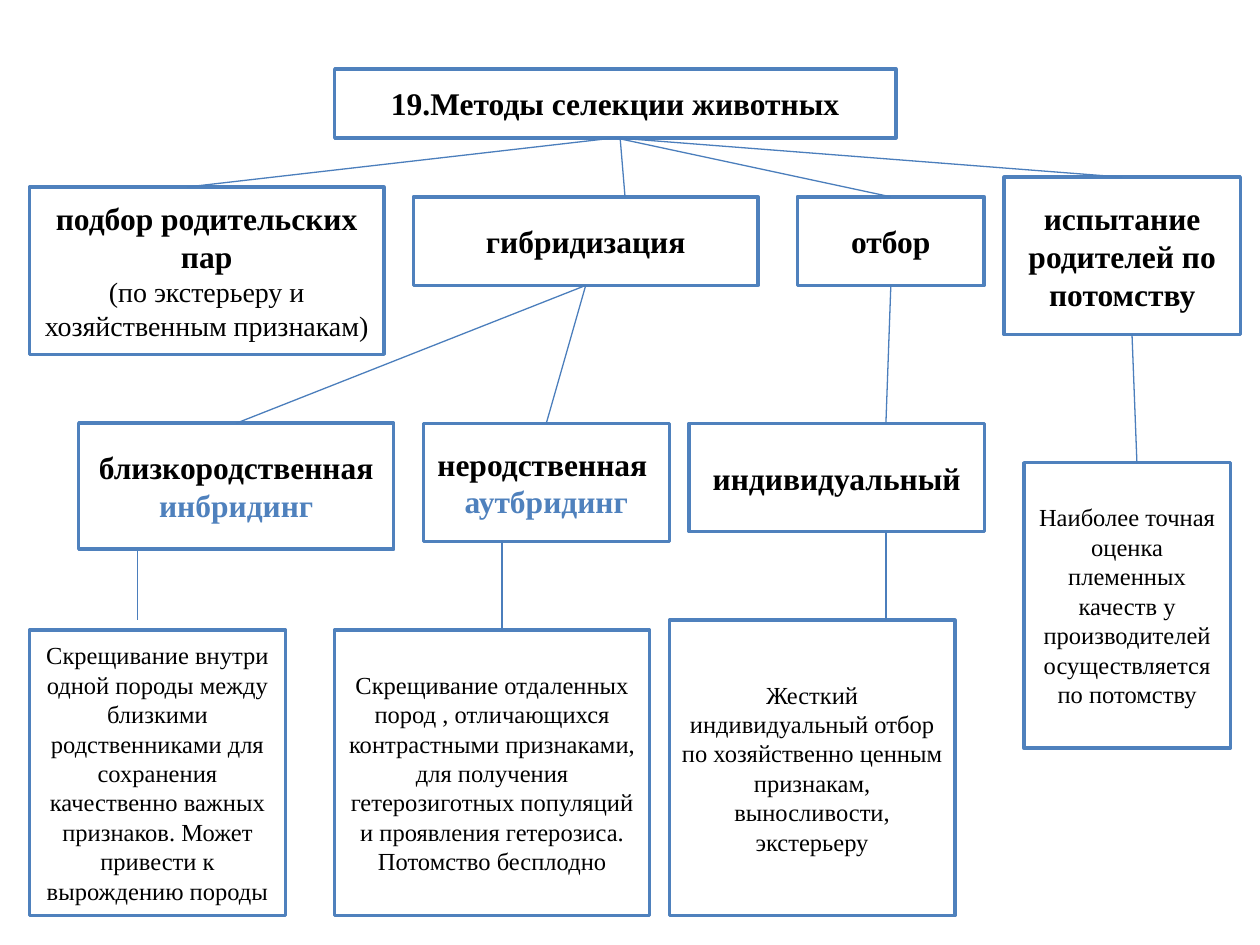
from dataclasses import dataclass
from typing import Optional

from lxml import etree
from pptx import Presentation
from pptx.dml.color import RGBColor
from pptx.enum.shapes import MSO_CONNECTOR, MSO_SHAPE
from pptx.enum.text import MSO_ANCHOR, PP_ALIGN
from pptx.oxml.ns import qn
from pptx.util import Inches, Pt

RECT = MSO_SHAPE.RECTANGLE
STRAIGHT = MSO_CONNECTOR.STRAIGHT
MIDDLE = MSO_ANCHOR.MIDDLE
CENTER = PP_ALIGN.CENTER
TOP, BOTTOM = 0, 2

WIDTH, HEIGHT = Inches(10), Inches(7.5)
COLS = 128
UNIT = WIDTH / COLS
FONT = "Times New Roman"
BLACK, WHITE, BLUE, LINK_BLUE = "000000", "FFFFFF", "4F81BD", "4B7EBC"


@dataclass
class Line:
    text: str
    size: int = 18
    bold: bool = True
    color: str = BLACK


@dataclass
class Box:
    name: str
    col: float
    row: float
    cols: float
    rows: float
    lines: list[Line]


@dataclass
class Link:
    x1: float
    y1: float
    x2: float
    y2: float
    start: Optional[str] = None
    end: Optional[str] = None


def note(text: str) -> Line:
    return Line(text, 14, False)


BOXES = [
    Box("title", 34, 7, 57, 7, [Line("19.Методы селекции животных")]),
    Box("hybrid", 42, 20, 35, 9, [Line("гибридизация")]),
    Box("selection", 81, 20, 19, 9, [Line("отбор")]),
    Box("pairs", 3, 19, 36, 17, [
        Line("подбор родительских пар"),
        Line("(по экстерьеру и хозяйственным признакам)", 16, False)]),
    Box("inbreeding", 8, 43, 32, 12.8, [
        Line("близкородственная"), Line("инбридинг", color=BLUE)]),
    Box("outbreeding", 43, 43, 25, 12, [
        Line("неродственная "), Line("аутбридинг", color=BLUE)]),
    Box("individual", 70, 43, 30, 11, [Line("индивидуальный")]),
    Box("inbreeding note", 3, 64, 26, 29, [
        note("Скрещивание внутри одной породы между близкими родственниками "
             "для сохранения качественно важных признаков. Может привести "
             "к вырождению породы")]),
    Box("outbreeding note", 34, 64, 32, 29, [
        note("Скрещивание отдаленных пород , отличающихся контрастными "
             "признаками, для получения гетерозиготных популяций и проявления "
             "гетерозиса. Потомство бесплодно")]),
    Box("individual note", 68, 63, 29, 30, [
        note("Жесткий индивидуальный отбор по хозяйственно ценным признакам, "
             "выносливости,"),
        note("экстерьеру")]),
    Box("testing", 102, 18, 24, 16, [Line("испытание родителей по потомству")]),
    Box("testing note", 104, 47, 21, 29, [
        note("Наиболее точная оценка племенных качеств у производителей "
             "осуществляется по потомству")]),
]

LINKS = [
    Link(62.5, 14, 19, 19, "title"),
    Link(63, 14, 63.5, 20),
    Link(62.5, 14, 90.5, 20, "title", "selection"),
    Link(62.5, 14, 114, 18, "title", "testing"),
    Link(59.5, 29, 24, 43, "hybrid", "inbreeding"),
    Link(59.5, 29, 55.5, 43, "hybrid", "outbreeding"),
    Link(90.5, 29, 90, 43, "selection"),
    Link(14, 56, 14, 63),
    Link(51, 55, 51, 64),
    Link(90, 54, 90, 63),
    Link(115, 34, 115.5, 47),
]


def rgb(color: str) -> RGBColor:
    return RGBColor.from_string(color)


def grid(*values: float) -> list[int]:
    return [round(v * UNIT) for v in values]


def draw_box(s, box: Box):
    sp = s.shapes.add_shape(RECT, *grid(box.col, box.row, box.cols, box.rows))
    sp.shadow.inherit = False
    sp.fill.solid()
    sp.fill.fore_color.rgb = rgb(WHITE)
    sp.line.color.rgb = rgb(BLUE)
    sp.line.width = Pt(2)
    tf = sp.text_frame
    tf.word_wrap = True
    tf.vertical_anchor = MIDDLE
    for i, line in enumerate(box.lines):
        p = tf.add_paragraph() if i else tf.paragraphs[0]
        p.text = line.text
        p.alignment = CENTER
        p.font.name = FONT
        p.font.size = Pt(line.size)
        p.font.bold = line.bold
        p.font.color.rgb = rgb(line.color)
    return sp


def draw_link(s, link: Link, shapes: dict) -> None:
    cn = s.shapes.add_connector(STRAIGHT, *grid(link.x1, link.y1, link.x2, link.y2))
    cn.line.color.rgb = rgb(LINK_BLUE)
    cn.line.width = Pt(0.75)
    etree.SubElement(cn._element.spPr, qn("a:effectLst"))
    if link.start:
        cn.begin_connect(shapes[link.start], BOTTOM)
    if link.end:
        cn.end_connect(shapes[link.end], TOP)


def main() -> None:
    prs = Presentation()
    prs.slide_width, prs.slide_height = WIDTH, HEIGHT
    s = prs.slides.add_slide(prs.slide_layouts[6])
    shapes = {box.name: draw_box(s, box) for box in BOXES}
    for link in LINKS:
        draw_link(s, link, shapes)
    prs.save("out.pptx")


if __name__ == "__main__":
    main()
